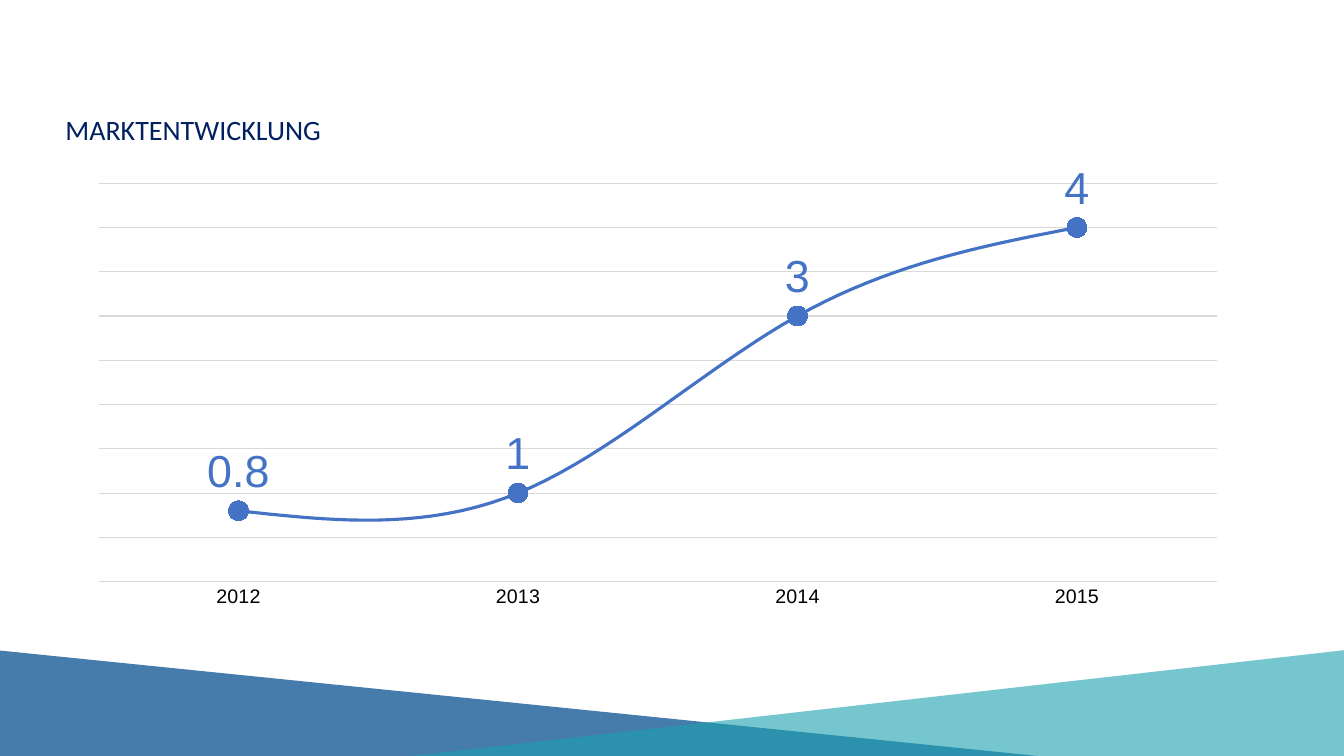
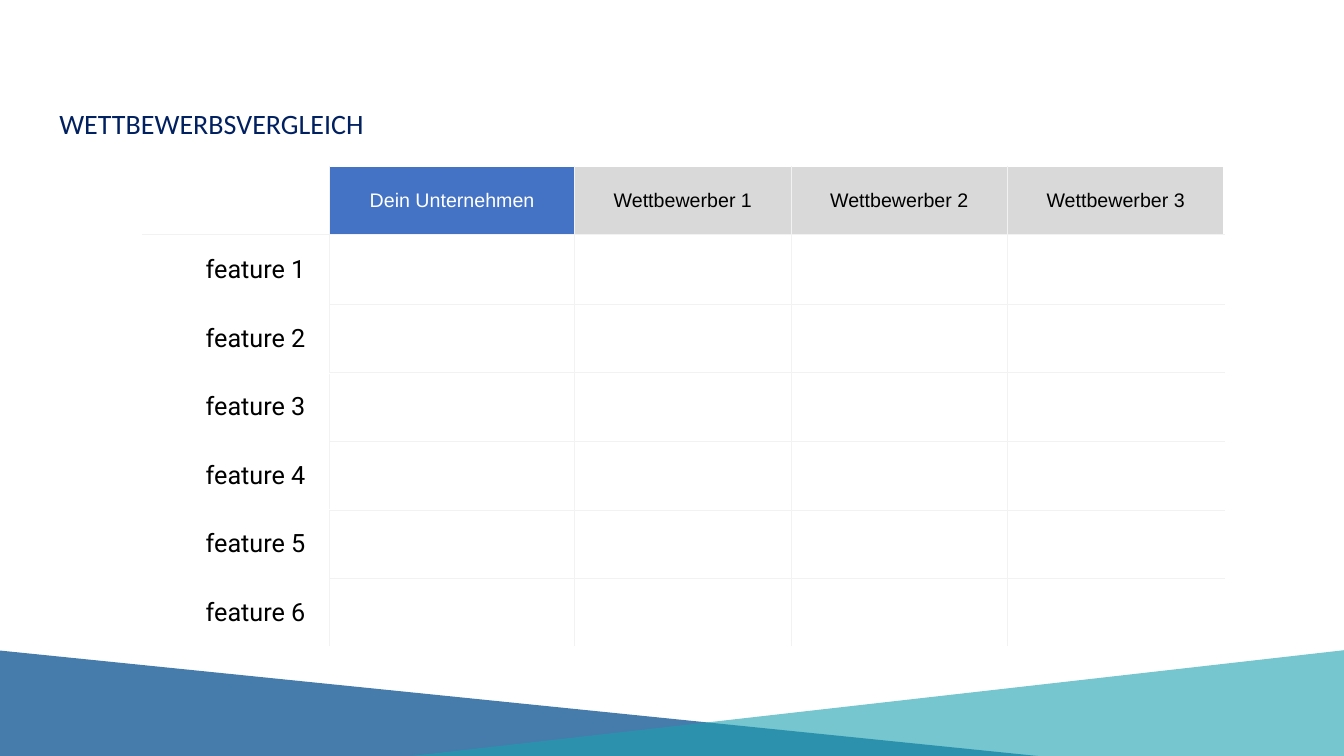
from lxml import etree
from pptx import Presentation
from pptx.chart.data import CategoryChartData
from pptx.dml.color import RGBColor
from pptx.enum.chart import XL_CHART_TYPE, XL_LABEL_POSITION, XL_MARKER_STYLE, XL_TICK_MARK
from pptx.enum.shapes import MSO_SHAPE
from pptx.enum.text import MSO_ANCHOR, PP_ALIGN
from pptx.oxml import parse_xml
from pptx.oxml.ns import nsdecls, qn
from pptx.util import Inches, Pt

LINE_MARKERS = XL_CHART_TYPE.LINE_MARKERS
ABOVE, CIRCLE, NO_TICK = XL_LABEL_POSITION.ABOVE, XL_MARKER_STYLE.CIRCLE, XL_TICK_MARK.NONE
TRIANGLE = MSO_SHAPE.ISOSCELES_TRIANGLE
MIDDLE, CENTER, RIGHT = MSO_ANCHOR.MIDDLE, PP_ALIGN.CENTER, PP_ALIGN.RIGHT

# Shared look
W, H = 13.33, 7.5
NAVY, BLUE, GREY, PALE = "002060", "4472C4", "D9D9D9", "F2F2F2"
WHITE, BLACK = "FFFFFF", "000000"
BAND_TOP = 6.45
BANDS = [  # left, width, height, share of the width at the tip, colour, opacity in percent
    (-7.68, 19.74, 1.23, 0.387, "095191", 75),
    (1.96, 22.75, 1.29, 0.5, "1BA0AF", 60),
]
TITLE_FONT = dict(name="Calibri", size=Pt(20), color=NAVY)

# Market chart
MARKET_TITLE = "MARKTENTWICKLUNG"
MARKET = {"2012": 0.8, "2013": 1, "2014": 3, "2015": 4}
CHART_BOX = (0.75, 1.23, 11.49, 5.25)
PLOT_AREA = dict(x=0.02, y=0.112, w=0.965, h=0.753)  # shares of the chart
AXIS_FONT = dict(name="Arial", size=Pt(14), color=BLACK)
LABEL_FONT = dict(name="Arial", size=Pt(32), color=BLUE)

# Comparison table
COMPARISON_TITLE = "WETTBEWERBSVERGLEICH"
HEADERS = ["Dein Unternehmen"] + [f"Wettbewerber {n}" for n in range(1, 4)]
FEATURES = [f"feature {n}" for n in range(1, 7)]
TABLE_LEFT, TABLE_TOP, TABLE_WIDTH = 1.41, 1.65, 10.73
NAME_WIDTH, OWN_WIDTH = 1.86, 2.43
RIVAL_WIDTH = (TABLE_WIDTH - NAME_WIDTH - OWN_WIDTH) / 3
COL_WIDTHS = [NAME_WIDTH, OWN_WIDTH] + [RIVAL_WIDTH] * 3
ROW_HEIGHTS = [0.68, 0.69] + [0.68] * 5
FEATURE_FONT = dict(name="Roboto", size=Pt(18), color=BLACK)


def rgb(value):
    return RGBColor.from_string(value)


def set_font(font, formats):
    for name, value in formats.items():
        if name == "color":
            font.color.rgb = rgb(value)
        else:
            setattr(font, name, value)


def set_fill(part, color):
    part.fill.solid()
    part.fill.fore_color.rgb = rgb(color)


def set_line(line, color, width):
    line.color.rgb = rgb(color)
    line.width = Pt(width)


def add_bands(s):
    for left, width, height, tip, color, opacity in BANDS:
        box = [Inches(v) for v in (left, BAND_TOP, width, height)]
        sp = s.shapes.add_shape(TRIANGLE, *box)
        sp.adjustments[0] = tip
        sp.shadow.inherit = False
        set_fill(sp, color)
        sp.line.fill.background()
        clr = sp._element.spPr.find(".//" + qn("a:srgbClr"))
        etree.SubElement(clr, qn("a:alpha")).set("val", str(opacity * 1000))


def add_slide(prs, title, left, top):
    s = prs.slides.add_slide(prs.slide_layouts[6])
    add_bands(s)
    tf = s.shapes.add_textbox(Inches(left), Inches(top), Inches(9.93), Inches(0.44)).text_frame
    tf.word_wrap = True
    r = tf.paragraphs[0].add_run()
    r.text = title
    set_font(r.font, TITLE_FONT)
    return s


def place_plot(chart):
    area = chart._chartSpace.chart.plotArea
    for old in area.findall(qn("c:layout")):
        area.remove(old)
    modes = '<c:layoutTarget val="inner"/><c:xMode val="edge"/><c:yMode val="edge"/>'
    sizes = "".join(f'<c:{key} val="{share}"/>' for key, share in PLOT_AREA.items())
    area.insert(0, parse_xml(f'<c:layout {nsdecls("c")}><c:manualLayout>{modes}{sizes}'
                             '</c:manualLayout></c:layout>'))


def add_market_chart(s):
    data = CategoryChartData()
    data.categories = list(MARKET)
    data.add_series("Series 1", list(MARKET.values()))
    box = [Inches(v) for v in CHART_BOX]
    chart = s.shapes.add_chart(LINE_MARKERS, *box, data).chart
    chart.has_legend = chart.has_title = False
    set_font(chart.font, AXIS_FONT)
    place_plot(chart)

    # Axes
    years, values = chart.category_axis, chart.value_axis
    years.major_tick_mark = years.minor_tick_mark = NO_TICK
    set_font(years.tick_labels.font, AXIS_FONT)
    set_line(years.format.line, GREY, 0.75)
    values.minimum_scale, values.maximum_scale, values.major_unit = 0, 4.5, 0.5
    values.has_major_gridlines = True
    set_line(values.major_gridlines.format.line, GREY, 0.75)
    values.visible = False

    # Curve, markers and labels
    plot = chart.plots[0]
    plot.vary_by_categories = False
    curve = plot.series[0]
    curve.smooth = True
    set_line(curve.format.line, BLUE, 2.25)
    curve.marker.style, curve.marker.size = CIRCLE, 14
    set_fill(curve.marker.format, BLUE)
    set_line(curve.marker.format.line, BLUE, 0.75)
    labels = curve.data_labels
    labels.show_value, labels.position = True, ABOVE
    set_font(labels.font, LABEL_FONT)


def set_borders(cell, row, col):
    """Pale inner rules, white outer ones; none between the feature names."""
    def across(edge):
        return 0 < edge < len(ROW_HEIGHTS) and (col > 0 or edge == 1)

    def down(edge):
        return 0 < edge < len(COL_WIDTHS)

    sides = dict(lnL=down(col), lnR=down(col + 1), lnT=across(row), lnB=across(row + 1))
    tc_pr = cell._tc.get_or_add_tcPr()
    for i, (side, inner) in enumerate(sides.items()):
        color, width = (PALE, 0.75) if inner else (WHITE, 1)
        tc_pr.insert(i, parse_xml(
            f'<a:{side} {nsdecls("a")} w="{Pt(width)}"><a:solidFill>'
            f'<a:srgbClr val="{color}"/></a:solidFill></a:{side}>'))


def write_cell(cell, text, align, formats):
    cell.vertical_anchor = MIDDLE
    p = cell.text_frame.paragraphs[0]
    p.alignment = align
    r = p.add_run()
    r.text = text
    set_font(r.font, formats)


def add_comparison(s):
    rows, cols = len(ROW_HEIGHTS), len(COL_WIDTHS)
    table = s.shapes.add_table(rows, cols, Inches(TABLE_LEFT), Inches(TABLE_TOP),
                               Inches(TABLE_WIDTH), Inches(sum(ROW_HEIGHTS))).table
    table.first_row = table.horz_banding = False
    for column, width in zip(table.columns, COL_WIDTHS):
        column.width = Inches(width)
    for line, height in zip(table.rows, ROW_HEIGHTS):
        line.height = Inches(height)
    for row in range(rows):
        for col in range(cols):
            cell = table.cell(row, col)
            set_fill(cell, WHITE)
            set_borders(cell, row, col)

    # Header row, own company highlighted
    for col, text in enumerate(HEADERS, 1):
        fill, color = (BLUE, WHITE) if col == 1 else (GREY, BLACK)
        set_fill(table.cell(0, col), fill)
        write_cell(table.cell(0, col), text, CENTER, dict(AXIS_FONT, color=color))

    # Feature names
    for row, text in enumerate(FEATURES, 1):
        cell = table.cell(row, 0)
        cell.margin_right = Inches(0.24)
        write_cell(cell, text, RIGHT, FEATURE_FONT)


def main():
    prs = Presentation()
    prs.slide_width, prs.slide_height = Inches(W), Inches(H)
    add_market_chart(add_slide(prs, MARKET_TITLE, 0.55, 1.07))
    add_comparison(add_slide(prs, COMPARISON_TITLE, 0.49, 1.01))
    prs.save("out.pptx")


if __name__ == "__main__":
    main()
